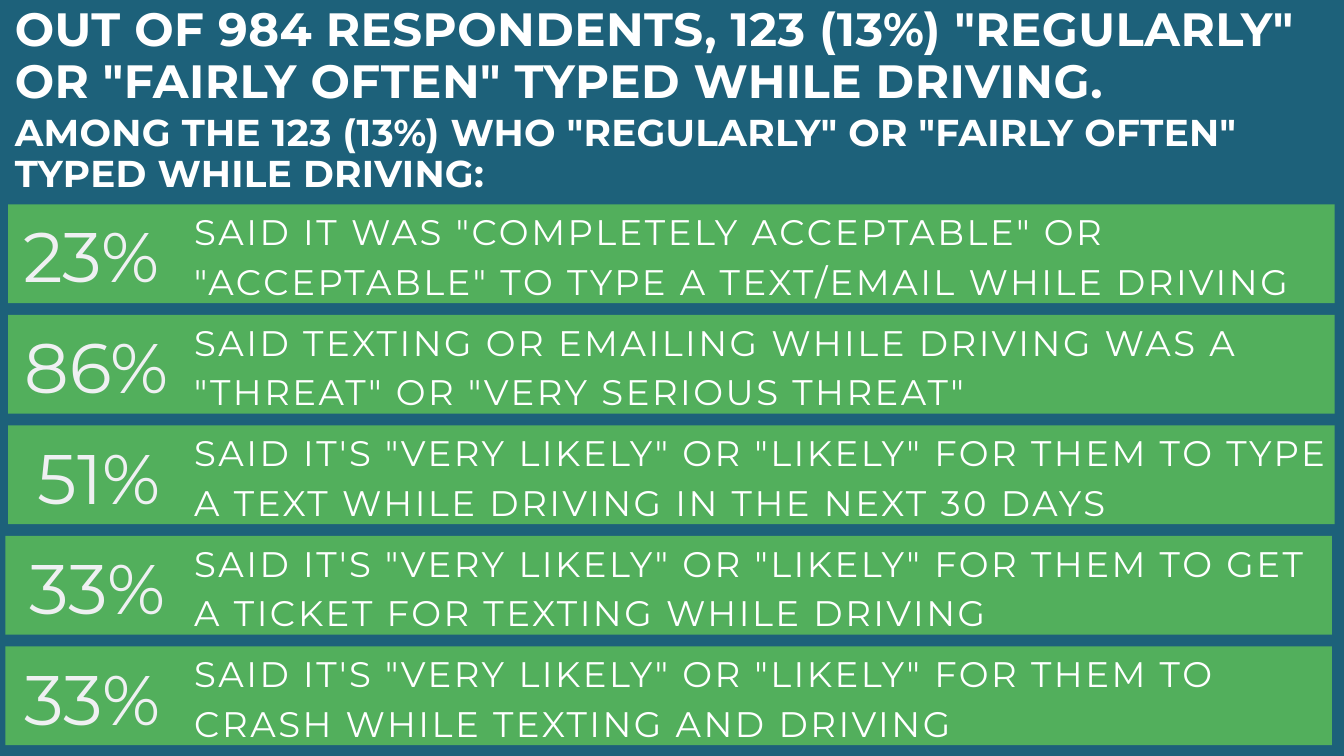
import dataclasses

import pptx
import pptx.dml.color
import pptx.enum.shapes
import pptx.enum.text
import pptx.util

Inches = pptx.util.Inches
Pt = pptx.util.Pt
Color = pptx.dml.color.RGBColor.from_string
Align = pptx.enum.text.PP_ALIGN


@dataclasses.dataclass(frozen=True)
class TextStyle:
    size: float
    line_height: float
    color: str = "FFFFFF"
    bold: bool = False
    tracking: float = 0
    alignment: Align = Align.LEFT


@dataclasses.dataclass(frozen=True)
class Theme:
    font: str = "Montserrat"
    background: str = "1D617A"
    bar: str = "52AF5C"
    headline: TextStyle = TextStyle(50, 55, bold=True, tracking=0.5)
    subhead: TextStyle = TextStyle(40, 44, bold=True, tracking=0.4)
    percent: TextStyle = TextStyle(75, 105, color="EFF0F2", alignment=Align.CENTER)
    statement: TextStyle = TextStyle(38, 53.2, tracking=2.7)


HEADING = [
    'OUT OF 984 RESPONDENTS, 123 (13%) "REGULARLY"',
    'OR "FAIRLY OFTEN" TYPED WHILE DRIVING.',
]
SUBHEAD = 'AMONG THE 123 (13%) WHO "REGULARLY" OR "FAIRLY OFTEN" TYPED WHILE DRIVING:'

# Bar left, centre of the percentage, percentage, statement
FINDINGS = [
    (0.12, 1.36, "23%",
     'SAID IT WAS "COMPLETELY ACCEPTABLE" OR "ACCEPTABLE" TO TYPE A TEXT/EMAIL WHILE DRIVING'),
    (0.12, 1.44, "86%",
     'SAID TEXTING OR EMAILING WHILE DRIVING WAS A "THREAT" OR "VERY SERIOUS THREAT"'),
    (0.12, 1.48, "51%",
     'SAID IT\'S "VERY LIKELY" OR "LIKELY" FOR THEM TO TYPE A TEXT WHILE DRIVING IN THE NEXT 30 DAYS'),
    (0.08, 1.45, "33%",
     'SAID IT\'S "VERY LIKELY" OR "LIKELY" FOR THEM TO GET A TICKET FOR TEXTING WHILE DRIVING'),
    (0.08, 1.38, "33%",
     'SAID IT\'S "VERY LIKELY" OR "LIKELY" FOR THEM TO CRASH WHILE TEXTING AND DRIVING'),
]
FIRST_BAR_TOP = 3.04
LAST_BAR_TOP = 9.62
BAR_PITCH = (LAST_BAR_TOP - FIRST_BAR_TOP) / (len(FINDINGS) - 1)
BAR_WIDTH, BAR_HEIGHT = 19.74, 1.47
PERCENT_WIDTH = 2.46
TEXT_HEIGHT = 1.42


class SlideBuilder:
    def __init__(self, slide, theme):
        self.slide = slide
        self.theme = theme
        fill = slide.background.fill
        fill.solid()
        fill.fore_color.rgb = Color(theme.background)

    def set_lines(self, text_frame, lines):
        """Fill a frame, without margins, with (text, style) paragraphs."""
        text_frame.word_wrap = True
        text_frame.auto_size = pptx.enum.text.MSO_AUTO_SIZE.NONE
        text_frame.vertical_anchor = pptx.enum.text.MSO_ANCHOR.TOP
        text_frame.margin_left = text_frame.margin_right = 0
        text_frame.margin_top = text_frame.margin_bottom = 0
        text_frame.text = "\n".join(text for text, _ in lines)
        for paragraph, (_, style) in zip(text_frame.paragraphs, lines):
            paragraph.alignment = style.alignment
            paragraph.line_spacing = Pt(style.line_height)
            font = paragraph.font
            font.name = self.theme.font
            font.size = Pt(style.size)
            font.bold = style.bold
            font.color.rgb = Color(style.color)
            properties = paragraph._p.get_or_add_pPr().get_or_add_defRPr()
            properties.set("spc", str(round(style.tracking * 100)))

    def title(self, left, top, width, height, headlines, subhead):
        title = self.slide.shapes.title
        title.left, title.top = Inches(left), Inches(top)
        title.width, title.height = Inches(width), Inches(height)
        lines = [(text, self.theme.headline) for text in headlines]
        self.set_lines(title.text_frame, lines + [(subhead, self.theme.subhead)])
        title.text_frame.paragraphs[-1].space_before = Pt(5.5)

    def bar(self, left, top):
        bar = self.slide.shapes.add_shape(
            pptx.enum.shapes.MSO_SHAPE.RECTANGLE,
            Inches(left), Inches(top), Inches(BAR_WIDTH), Inches(BAR_HEIGHT))
        bar.shadow.inherit = False
        bar.fill.solid()
        bar.fill.fore_color.rgb = Color(self.theme.bar)
        bar.line.fill.background()

    def text(self, left, top, width, text, style):
        box = self.slide.shapes.add_textbox(
            Inches(left), Inches(top), Inches(width), Inches(TEXT_HEIGHT))
        self.set_lines(box.text_frame, [(text, style)])


def main():
    presentation = pptx.Presentation()
    presentation.slide_width = Inches(20)
    presentation.slide_height = Inches(11.25)
    title_only = presentation.slide_layouts[5]
    theme = Theme()
    builder = SlideBuilder(presentation.slides.add_slide(title_only), theme)

    builder.title(0.22, 0.07, 19.52, 2.86, HEADING, SUBHEAD)
    for index, (bar_left, percent_center, percent, statement) in enumerate(FINDINGS):
        top = FIRST_BAR_TOP + index * BAR_PITCH
        builder.bar(bar_left, top)
        builder.text(percent_center - PERCENT_WIDTH / 2, top - 0.08, PERCENT_WIDTH,
                     percent, theme.percent)
        builder.text(2.89, top - 0.02, 16.93, statement, theme.statement)

    presentation.save("out.pptx")


if __name__ == "__main__":
    main()
